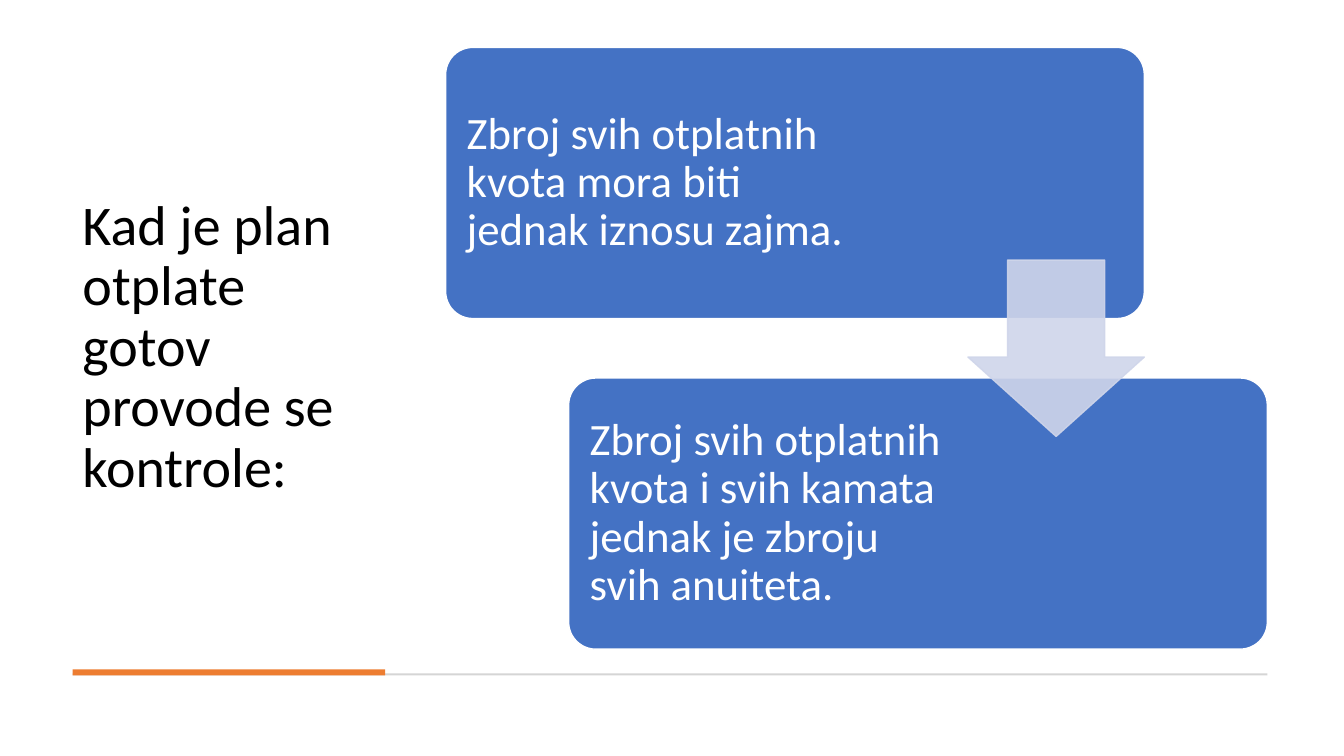
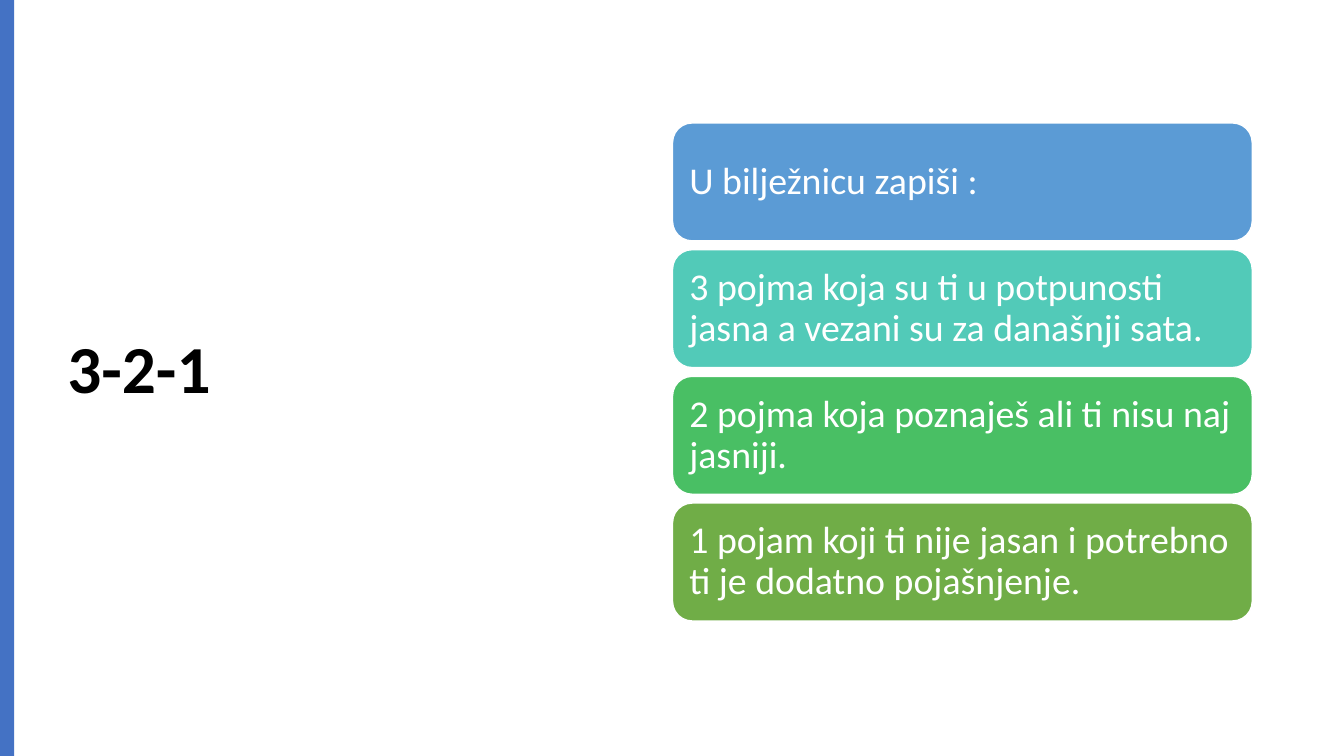
from lxml import etree
from pptx import Presentation
from pptx.dml.color import RGBColor
from pptx.enum.shapes import MSO_SHAPE
from pptx.enum.text import MSO_ANCHOR, PP_ALIGN
from pptx.oxml.ns import qn
from pptx.util import Inches, Pt

RECT = MSO_SHAPE.RECTANGLE
ROUNDED = MSO_SHAPE.ROUNDED_RECTANGLE
DOWN_ARROW = MSO_SHAPE.DOWN_ARROW
MIDDLE = MSO_ANCHOR.MIDDLE
LEFT = PP_ALIGN.LEFT

FONT = "Calibri"
COLORS = {
    "text": "000000",
    "white": "FFFFFF",
    "blue": "4472C4",
    "orange": "ED7D31",
    "rule": "D5D5D5",
    "arrow": "CFD5EA",
    "sky": "5B9BD5",
    "teal": "52CAB8",
    "green": "49BF64",
    "olive": "70AD47",
}


def rgb(name):
    return RGBColor.from_string(COLORS[name])


def add_text(sp, text, size, color, bold=False, insets=(0.1, 0.05, 0.1, 0.05)):
    """Write one left-aligned paragraph; insets run left, top, right, bottom."""
    tf = sp.text_frame
    frame_format = {"word_wrap": True, "vertical_anchor": MIDDLE}
    sides = ("margin_left", "margin_top", "margin_right", "margin_bottom")
    frame_format.update(zip(sides, map(Inches, insets)))
    for key, value in frame_format.items():
        setattr(tf, key, value)
    p = tf.paragraphs[0]
    p.alignment, p.line_spacing = LEFT, 0.9
    r = p.add_run()
    r.text = text
    for key, value in {"name": FONT, "size": Pt(size), "bold": bold}.items():
        setattr(r.font, key, value)
    r.font.color.rgb = rgb(color)


def add_title(s, box, text, size, bold=False):
    sp = s.shapes.add_textbox(*map(Inches, box))
    add_text(sp, text, size, "text", bold)


def add_shape(s, kind, box, fill, line=None, adjust=()):
    sp = s.shapes.add_shape(kind, *map(Inches, box))
    sp.shadow.inherit = False
    sp.fill.solid()
    sp.fill.fore_color.rgb = rgb(fill)
    if line:
        sp.line.color.rgb = rgb(line)
        sp.line.width = Pt(1)
    else:
        sp.line.fill.background()
    for i, value in enumerate(adjust):
        sp.adjustments[i] = value
    return sp


def add_card(s, box, fill, text, size, radius, inset, right_inset):
    sp = add_shape(s, ROUNDED, box, fill, "white", [radius])
    add_text(sp, text, size, "white", insets=(inset, inset, right_inset, inset))


def set_opacity(sp, percent):
    """Apply the opacity to the fill and the outline alike."""
    for clr in sp.fill._xPr.iter(qn("a:srgbClr")):
        etree.SubElement(clr, qn("a:alpha")).set("val", str(percent * 1000))


def build_checks(s):
    add_title(s, (0.72, 0.47, 3.1, 5.97),
              "Kad je plan otplate gotov provode se kontrole:", 40)
    add_shape(s, RECT, (0.72, 6.68, 11.85, 0.02), "rule")
    add_shape(s, RECT, (0.72, 6.64, 3.1, 0.06), "orange")
    checks = [
        ("Zbroj svih otplatnih kvota mora biti jednak iznosu zajma.", 2.75),
        ("Zbroj svih otplatnih kvota i svih kamata jednak je zbroju svih anuiteta.", 3.1),
    ]
    for i, (text, right_inset) in enumerate(checks):
        box = (4.42 + i * 1.22, 0.47 + i * 3.28, 6.93, 2.69)
        add_card(s, box, "blue", text, 32, 0.1, 0.13, right_inset)
    arrow = add_shape(s, DOWN_ARROW, (9.6, 2.58, 1.75, 1.75), "arrow", "arrow")
    # The head is 45 % of the height, the shaft 55 % of the width.
    arrow.adjustments[0], arrow.adjustments[1] = 0.55, 0.45
    set_opacity(arrow, 90)


def build_reflection(s):
    add_title(s, (0.57, 0.68, 5.67, 6.02), "3-2-1", 48, bold=True)
    add_shape(s, RECT, (0, 0, 0.14, 7.5), "blue")
    tasks = [
        ("sky", "U bilježnicu zapiši :"),
        ("teal", "3 pojma koja su ti u potpunosti jasna a vezani su za današnji sata."),
        ("green", "2 pojma koja poznaješ ali ti nisu naj jasniji."),
        ("olive", "1 pojam koji ti nije jasan i potrebno ti je dodatno pojašnjenje."),
    ]
    for i, (fill, text) in enumerate(tasks):
        box = (6.67, 1.22 + i * 1.257, 5.75, 1.17)
        add_card(s, box, fill, text, 27, 0.1667, 0.11, 0.11)


def main():
    prs = Presentation()
    prs.slide_width, prs.slide_height = Inches(13.33), Inches(7.5)
    for build in (build_checks, build_reflection):
        build(prs.slides.add_slide(prs.slide_layouts[6]))
    prs.save("out.pptx")


if __name__ == "__main__":
    main()
